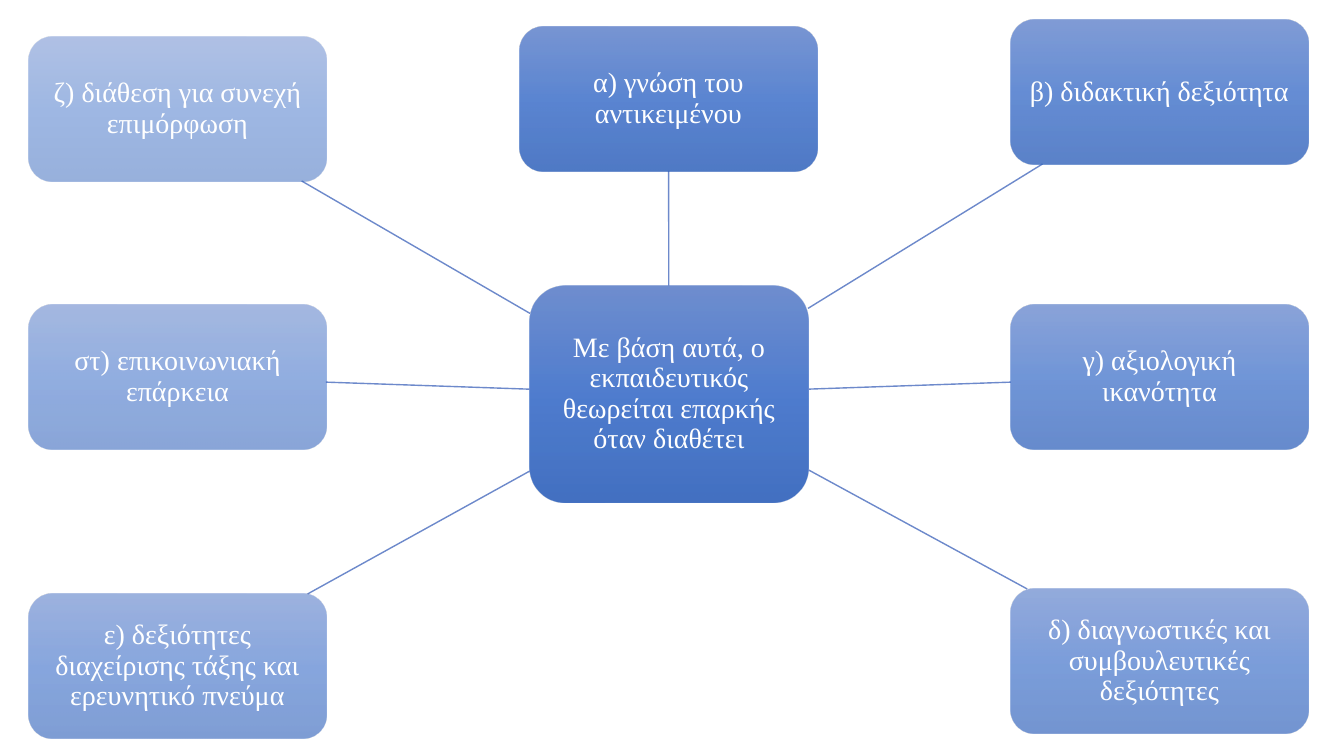
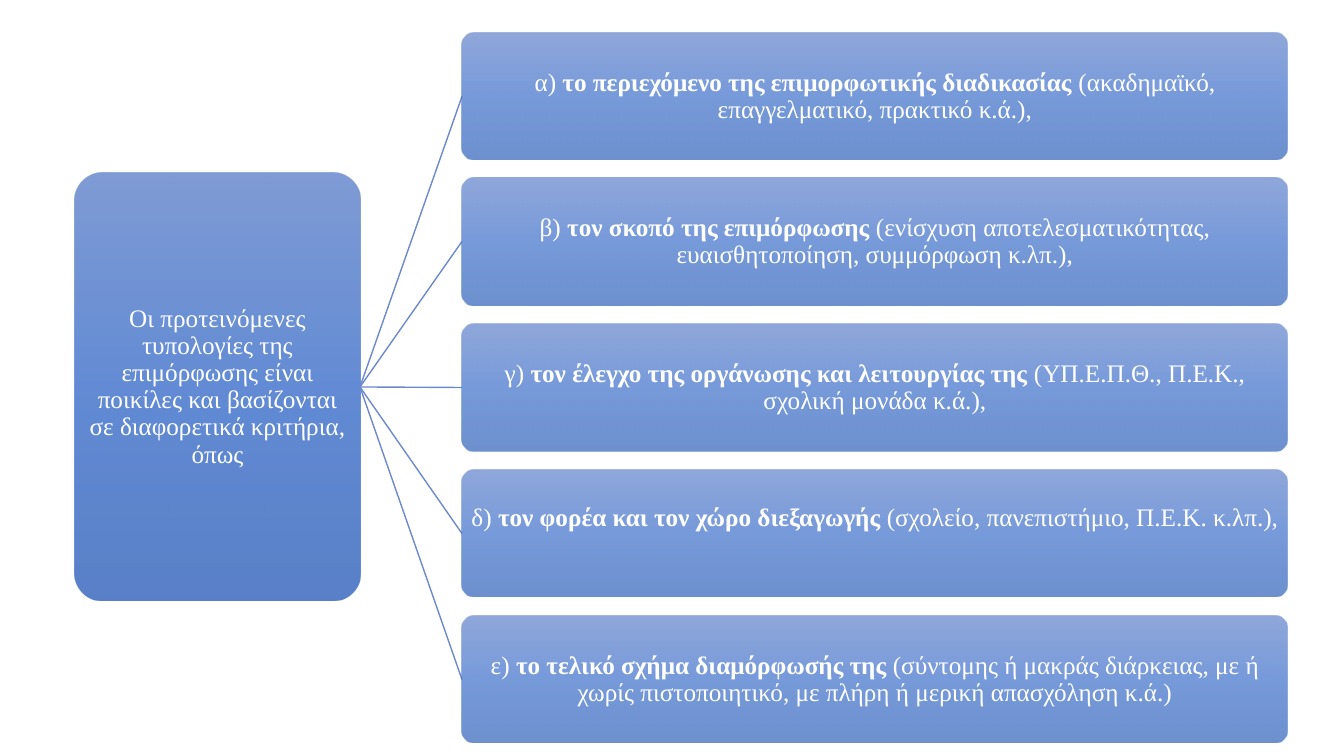
from dataclasses import dataclass

from lxml import etree
from pptx import Presentation
from pptx.dml.color import RGBColor
from pptx.enum.shapes import MSO_CONNECTOR, MSO_SHAPE
from pptx.enum.text import MSO_ANCHOR, PP_ALIGN
from pptx.oxml.ns import qn
from pptx.util import Emu, Pt

ROUND = MSO_SHAPE.ROUNDED_RECTANGLE
STRAIGHT = MSO_CONNECTOR.STRAIGHT
MIDDLE = MSO_ANCHOR.MIDDLE
CENTER = PP_ALIGN.CENTER

SCALE = 914400 / 100.8
WIDTH, HEIGHT = 1344, 756
FONT = "Times New Roman"
COLORS = {
    "top": "6183CB",
    "mid": "3E70CA",
    "base": "3062BB",
    "link": "6D89CB",
    "text": "FFFFFF",
}
STOPS = ((0, "top"), (50, "mid"), (100, "base"))


@dataclass(frozen=True)
class Run:
    text: str
    bold: bool = False


@dataclass(frozen=True)
class Look:
    size: int
    inset: int
    round: float


@dataclass(frozen=True)
class Box:
    left: int
    top: int
    width: int
    height: int
    alpha: int
    runs: tuple[Run, ...]

    @property
    def center(self) -> tuple[float, float]:
        return self.left + self.width / 2, self.top + self.height / 2

    def edge(self, goal: tuple[float, float]) -> tuple[float, float]:
        x, y = self.center
        dx, dy = goal[0] - x, goal[1] - y
        ratio = 2 * max(abs(dx) / self.width, abs(dy) / self.height)
        return x + dx / ratio, y + dy / ratio


RADIAL = Look(20, 6, 0.1667)
TREE = Look(18, 1, 0.1)

CORE = Box(530, 286, 278, 216, 90, (
    Run("Με βάση αυτά, ο εκπαιδευτικός θεωρείται επαρκής όταν διαθέτει"),
))
SPOKES = (
    (520, 27, "α) γνώση του αντικειμένου"),
    (1011, 20, "β) διδακτική δεξιότητα"),
    (1011, 305, "γ) αξιολογική ικανότητα"),
    (1011, 589, "δ) διαγνωστικές και συμβουλευτικές δεξιότητες"),
    (29, 594, "ε) δεξιότητες διαχείρισης τάξης και ερευνητικό πνεύμα"),
    (29, 305, "στ) επικοινωνιακή επάρκεια"),
    (29, 37, "ζ) διάθεση για συνεχή επιμόρφωση"),
)
ROOT = Box(75, 173, 285, 428, 80, (
    Run("Οι προτεινόμενες τυπολογίες της επιμόρφωσης είναι ποικίλες "
        "και βασίζονται σε διαφορετικά κριτήρια, όπως"),
))
ROWS = (
    ("α) ", "το περιεχόμενο της επιμορφωτικής διαδικασίας",
     " (ακαδημαϊκό, επαγγελματικό, πρακτικό κ.ά.),"),
    ("β) ", "τον σκοπό της επιμόρφωσης",
     " (ενίσχυση αποτελεσματικότητας, ευαισθητοποίηση, συμμόρφωση κ.λπ.),"),
    ("γ) ", "τον έλεγχο της οργάνωσης και λειτουργίας της",
     " (ΥΠ.Ε.Π.Θ., Π.Ε.Κ., σχολική μονάδα κ.ά.),"),
    ("δ) ", "τον φορέα και τον χώρο διεξαγωγής",
     " (σχολείο, πανεπιστήμιο, Π.Ε.Κ. κ.λπ.),\n"),
    ("ε) ", "το τελικό σχήμα διαμόρφωσής της",
     " (σύντομης ή μακράς διάρκειας, με ή χωρίς πιστοποιητικό, "
     "με πλήρη ή μερική απασχόληση κ.ά.)"),
)
FIRST, LAST = 33, 616


def px(value: float) -> Emu:
    return Emu(round(value * SCALE))


def color(name: str) -> RGBColor:
    return RGBColor.from_string(COLORS[name])


def shade(shape, alpha: int) -> None:
    shape.fill.gradient()
    shape.fill.gradient_angle = 270
    stops = shape._element.spPr.find(".//" + qn("a:gsLst"))
    for old in list(stops):
        stops.remove(old)
    for place, name in STOPS:
        stop = etree.SubElement(stops, qn("a:gs"), pos=str(place * 1000))
        tint = etree.SubElement(stop, qn("a:srgbClr"), val=COLORS[name])
        etree.SubElement(tint, qn("a:alpha"), val=str(alpha * 1000))


def write(frame, runs: tuple[Run, ...], look: Look) -> None:
    frame.word_wrap = True
    frame.vertical_anchor = MIDDLE
    frame.margin_left = frame.margin_right = px(look.inset)
    frame.margin_top = frame.margin_bottom = px(look.inset)
    para = frame.paragraphs[0]
    para.alignment = CENTER
    para.line_spacing = 0.9
    for item in runs:
        run = para.add_run()
        run.text = item.text.rstrip("\n")
        run.font.name = FONT
        run.font.size = Pt(look.size)
        run.font.bold = item.bold
        run.font.color.rgb = color("text")
        if item.text.endswith("\n"):
            para.add_line_break()


def draw(slide, box: Box, look: Look) -> None:
    shape = slide.shapes.add_shape(
        ROUND, px(box.left), px(box.top), px(box.width), px(box.height))
    shape.adjustments[0] = look.round
    shape.shadow.inherit = False
    shape.line.fill.background()
    shade(shape, box.alpha)
    write(shape.text_frame, box.runs, look)


def link(slide, start: tuple[float, float], end: tuple[float, float]) -> None:
    line = slide.shapes.add_connector(STRAIGHT, *map(px, start + end))
    line.line.color.rgb = color("link")
    line.line.width = Pt(1)
    etree.SubElement(line._element.spPr, qn("a:effectLst"))


def radial(slide) -> None:
    draw(slide, CORE, RADIAL)
    for index, (left, top, text) in enumerate(SPOKES, 1):
        alpha = round(90 - 40 * index / len(SPOKES))
        box = Box(left, top, 297, 144, alpha, (Run(text),))
        link(slide, CORE.edge(box.center), box.edge(CORE.center))
        draw(slide, box, RADIAL)


def tree(slide) -> None:
    draw(slide, ROOT, TREE)
    start = (ROOT.left + ROOT.width, ROOT.center[1])
    for index, (mark, theme, note) in enumerate(ROWS):
        top = FIRST + index * (LAST - FIRST) // (len(ROWS) - 1)
        runs = (Run(mark), Run(theme, True), Run(note))
        box = Box(462, top, 826, 127, 70, runs)
        link(slide, start, (box.left, box.center[1]))
        draw(slide, box, TREE)


def main() -> None:
    deck = Presentation()
    deck.slide_width, deck.slide_height = px(WIDTH), px(HEIGHT)
    blank = deck.slide_layouts[6]
    for build in (radial, tree):
        build(deck.slides.add_slide(blank))
    deck.save("out.pptx")


if __name__ == "__main__":
    main()
